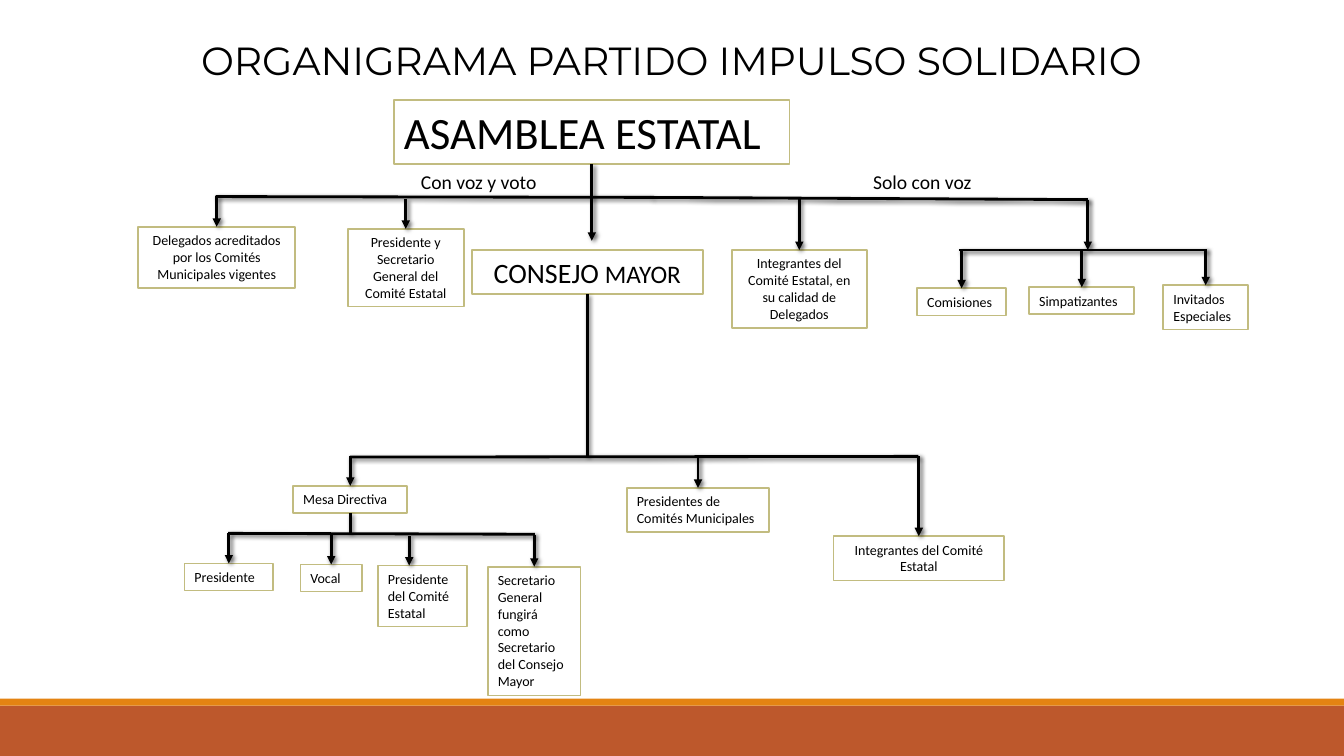
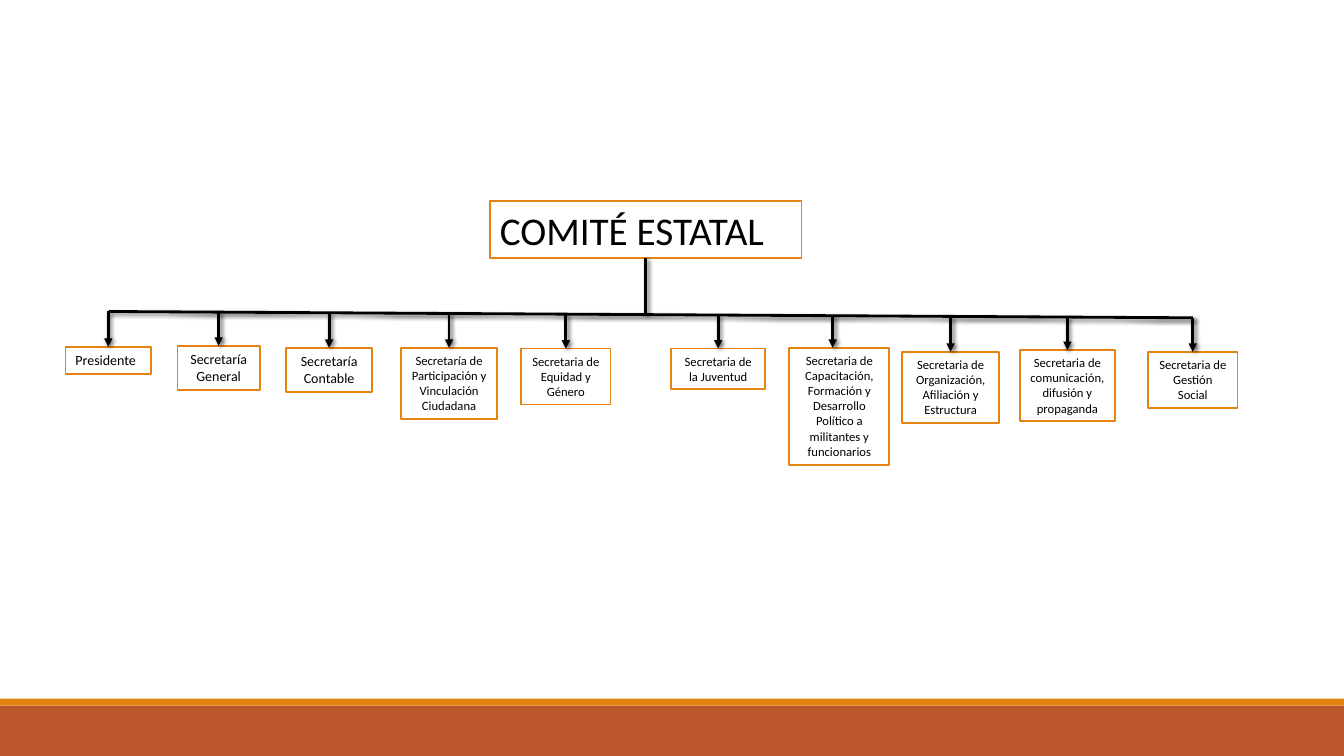
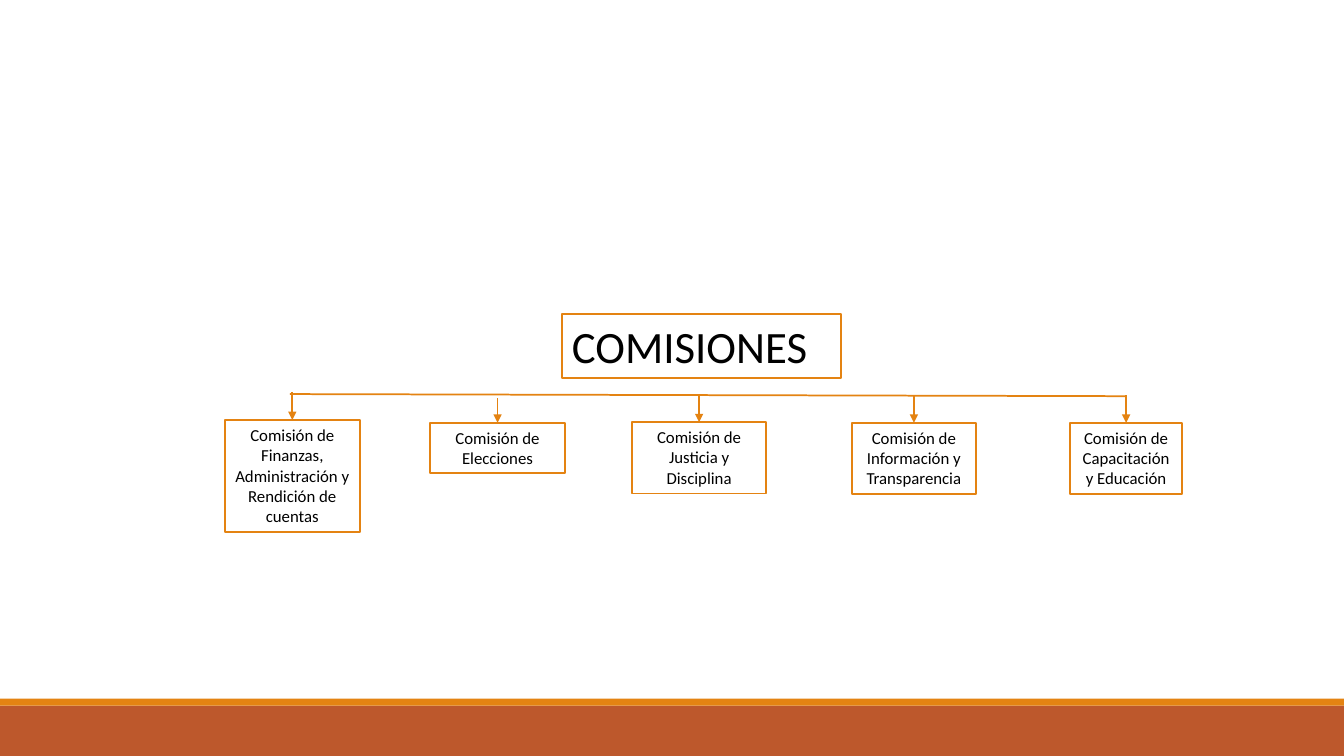
import collections

import pptx
import pptx.dml.color
import pptx.enum.shapes
import pptx.enum.text
import pptx.oxml
import pptx.oxml.ns
import pptx.util

Pt = pptx.util.Pt
RGBColor = pptx.dml.color.RGBColor
RECTANGLE = pptx.enum.shapes.MSO_SHAPE.RECTANGLE
STRAIGHT = pptx.enum.shapes.MSO_CONNECTOR.STRAIGHT
LEFT = pptx.enum.text.PP_ALIGN.LEFT
CENTER = pptx.enum.text.PP_ALIGN.CENTER
JUSTIFY = pptx.enum.text.PP_ALIGN.JUSTIFY

BLACK = RGBColor(0x00, 0x00, 0x00)
WHITE = RGBColor(0xFF, 0xFF, 0xFF)
ORANGE = RGBColor(0xE4, 0x83, 0x12)
RUST = RGBColor(0xBD, 0x58, 0x2C)
KHAKI = RGBColor(0xC2, 0xBC, 0x80)

WIDTH, HEIGHT = 960, 540
NS = pptx.oxml.ns.nsdecls("a")
NO_EFFECT = f"<a:effectLst {NS}/>"
SHADOW = (
    f'<a:effectLst {NS}><a:outerShdw blurRad="38100" dist="25400" dir="2700000" rotWithShape="0">'
    '<a:srgbClr val="000000"><a:alpha val="60000"/></a:srgbClr></a:outerShdw></a:effectLst>'
)
ARROWHEAD = f'<a:tailEnd {NS} type="triangle"/>'

# bar_y: where the incoming arrow starts; dx: its offset from the box centre.
# stem_y: where the outgoing line ends.
Box = collections.namedtuple(
    "Box", "text x y w h size align bar_y dx stem_y stem_arrow",
    defaults=(10, CENTER, None, 0, None, False))
Chart = collections.namedtuple("Chart", "border line_color line_width shadow boxes bars arrows")


def add_text(s, text, x, y, w, h, size=10, align=LEFT, font="Calibri", border=None, wrap=True):
    """Text is a string, or a list of (string, size) runs; a border makes it a white box."""
    if border is None:
        sp = s.shapes.add_textbox(Pt(x), Pt(y), Pt(w), Pt(h))
    else:
        sp = s.shapes.add_shape(RECTANGLE, Pt(x), Pt(y), Pt(w), Pt(h))
        sp.shadow.inherit = False
        sp.fill.solid()
        sp.fill.fore_color.rgb = WHITE
        sp.line.color.rgb = border
        sp.line.width = Pt(1.25)
    tf = sp.text_frame
    tf.word_wrap = wrap
    tf.auto_size = pptx.enum.text.MSO_AUTO_SIZE.SHAPE_TO_FIT_TEXT
    tf.vertical_anchor = pptx.enum.text.MSO_ANCHOR.TOP
    p = tf.paragraphs[0]
    p.alignment = align
    for run_text, run_size in [(text, size)] if isinstance(text, str) else text:
        r = p.add_run()
        r.text = run_text
        r.font.name = font
        r.font.size = Pt(run_size)
        r.font.color.rgb = BLACK
    return sp


def add_line(s, chart, x1, y1, x2, y2, arrow=False, start=None, end=None):
    """Draw a line, joined to the bottom of start and the top of end if given."""
    line = s.shapes.add_connector(STRAIGHT, Pt(x1), Pt(y1), Pt(x2), Pt(y2))
    if start is not None:
        line.begin_connect(start, 2)
    if end is not None:
        line.end_connect(end, 0)
    line.line.color.rgb = chart.line_color
    line.line.width = Pt(chart.line_width)
    if arrow:
        line.line._get_or_add_ln().append(pptx.oxml.parse_xml(ARROWHEAD))
    line._element.spPr.append(pptx.oxml.parse_xml(SHADOW if chart.shadow else NO_EFFECT))


assembly = Chart(
    KHAKI, BLACK, 2, True,
    boxes=[
        Box("ASAMBLEA ESTATAL", 281.5, 71.3, 282.5, 46, 32, LEFT, stem_y=172, stem_arrow=True),
        Box("Delegados acreditados por los Comités Municipales vigentes",
            98.6, 162, 112.4, 44, bar_y=140),
        Box("Presidente y Secretario General del Comité Estatal",
            248.4, 163.5, 82.8, 55.5, bar_y=142),
        Box([("CONSEJO", 20), (" MAYOR", 18)], 337, 178.6, 165, 31.6, stem_y=326),
        Box("Integrantes del Comité Estatal, en su calidad de Delegados",
            522.7, 178.6, 96.5, 55.5, bar_y=142),
        Box("Comisiones", 655.2, 206, 63.4, 19.4, align=LEFT, bar_y=179),
        Box("Simpatizantes", 735.2, 205.2, 75, 19.4, align=LEFT, bar_y=179),
        Box("Invitados Especiales", 831, 203.8, 60.5, 31.6, align=JUSTIFY, bar_y=178),
        Box("Mesa Directiva", 209.5, 347, 81.4, 19.4, align=LEFT, bar_y=326, stem_y=381),
        Box("Presidentes de Comités Municipales", 447.8, 348.5, 101.6, 31.6, align=LEFT, bar_y=326),
        Box("Integrantes del Comité Estatal", 595.4, 383, 121.8, 31.6, bar_y=326),
        Box("Presidente", 131.8, 402.5, 63.4, 19.4, align=LEFT, bar_y=381),
        Box("Vocal", 214.6, 403.2, 44, 19.4, align=LEFT, bar_y=381),
        Box("Presidente del Comité Estatal", 270, 404, 63.4, 43.6, align=LEFT, bar_y=383, dx=-9.4),
        Box("Secretario General fungirá como Secretario del Consejo Mayor",
            348.5, 404.8, 66.2, 92, align=LEFT, bar_y=382),
    ],
    bars=[
        (154, 140.4, 465, 141), (465, 141, 777, 142.6), (685, 178.6, 862, 178.6),
        (250, 326.5, 656, 326), (163, 381, 382, 381.6),
    ],
    arrows=[(777, 142.6, 777, 178.6)])

committee = Chart(
    ORANGE, BLACK, 2, True,
    boxes=[
        Box("COMITÉ ESTATAL", 350, 143.5, 222.6, 41, 28, LEFT, stem_y=224),
        Box("Presidente", 46.8, 247.7, 61.2, 19.4, align=LEFT, bar_y=222),
        Box("Secretaría General", 126.7, 247, 59, 31.6, bar_y=222),
        Box("Secretaría Contable", 204.5, 248.4, 61.2, 31.6, bar_y=224),
        Box("Secretaría de Participación y Vinculación Ciudadana",
            286.5, 248.4, 68.5, 51, 9, bar_y=224),
        Box("Secretaria de Equidad y Género", 372.2, 249, 64, 40, 9, bar_y=224.5),
        Box("Secretaria de la Juventud", 479.5, 249, 67, 29, 9, bar_y=225),
        Box("Secretaria de Capacitación, Formación y Desarrollo Político a militantes y funcionarios",
            563.8, 248.4, 71.4, 83.6, 9, bar_y=225, dx=-4.7),
        Box("Secretaria de Organización, Afiliación y Estructura",
            644.4, 251.3, 69.2, 51, 9, bar_y=226),
        Box("Secretaria de comunicación, difusión y propaganda",
            728.6, 250, 67.7, 51, 9, bar_y=226),
        Box("Secretaria de Gestión Social", 820, 251.3, 64, 40, 9, bar_y=227),
    ],
    bars=[(77.5, 222.5, 852, 227)],
    arrows=[])

commissions = Chart(
    ORANGE, ORANGE, 1.25, False,
    boxes=[
        Box("COMISIONES", 401.5, 224.2, 199.4, 46, 32, LEFT),
        Box("Comisión de Finanzas, Administración y Rendición de cuentas",
            160.6, 300, 96.4, 79.8, 12, bar_y=280),
        Box("Comisión de Elecciones", 307.4, 302, 96, 36, 12, bar_y=284.5),
        Box("Comisión de Justicia y Disciplina", 451.4, 301.5, 96, 51, 12, bar_y=282),
        Box("Comisión de Información y Transparencia", 608.4, 302, 88.8, 51, 12, bar_y=283),
        Box("Comisión de Capacitación y Educación", 764.4, 302, 80, 51, 12, bar_y=282.5),
    ],
    bars=[(207, 281.5, 804.4, 283)],
    arrows=[])

prs = pptx.Presentation()
prs.slide_width, prs.slide_height = Pt(WIDTH), Pt(HEIGHT)

for chart in (assembly, committee, commissions):
    s = prs.slides.add_slide(prs.slide_layouts[6])
    for top, height, color in ((504, 36, RUST), (499, 5, ORANGE)):
        band = s.shapes.add_shape(RECTANGLE, 0, Pt(top), Pt(WIDTH), Pt(height))
        band.shadow.inherit = False
        band.fill.solid()
        band.fill.fore_color.rgb = color
        band.line.fill.background()

    for box in chart.boxes:
        sp = add_text(s, box.text, box.x, box.y, box.w, box.h, size=box.size, align=box.align,
                      border=chart.border)
        middle = box.x + box.w / 2
        if box.bar_y is not None:
            x = middle + box.dx
            add_line(s, chart, x, box.bar_y, x, box.y, arrow=True, end=None if box.dx else sp)
        if box.stem_y is not None:
            add_line(s, chart, middle, box.y + box.h, middle, box.stem_y,
                     arrow=box.stem_arrow, start=sp)
    for bar in chart.bars:
        add_line(s, chart, *bar)
    for arrow in chart.arrows:
        add_line(s, chart, *arrow, arrow=True)

    if chart is assembly:
        add_text(s, "ORGANIGRAMA PARTIDO IMPULSO SOLIDARIO", 104.5, 22.3, 750, 41, size=28,
                 align=CENTER, font="Montserrat", wrap=False)
        for label, x in (("Con voz y voto", 293.5), ("Solo con voz", 616.5)):
            add_text(s, label, x, 117.5, 109, 24, size=14)

prs.save("out.pptx")
